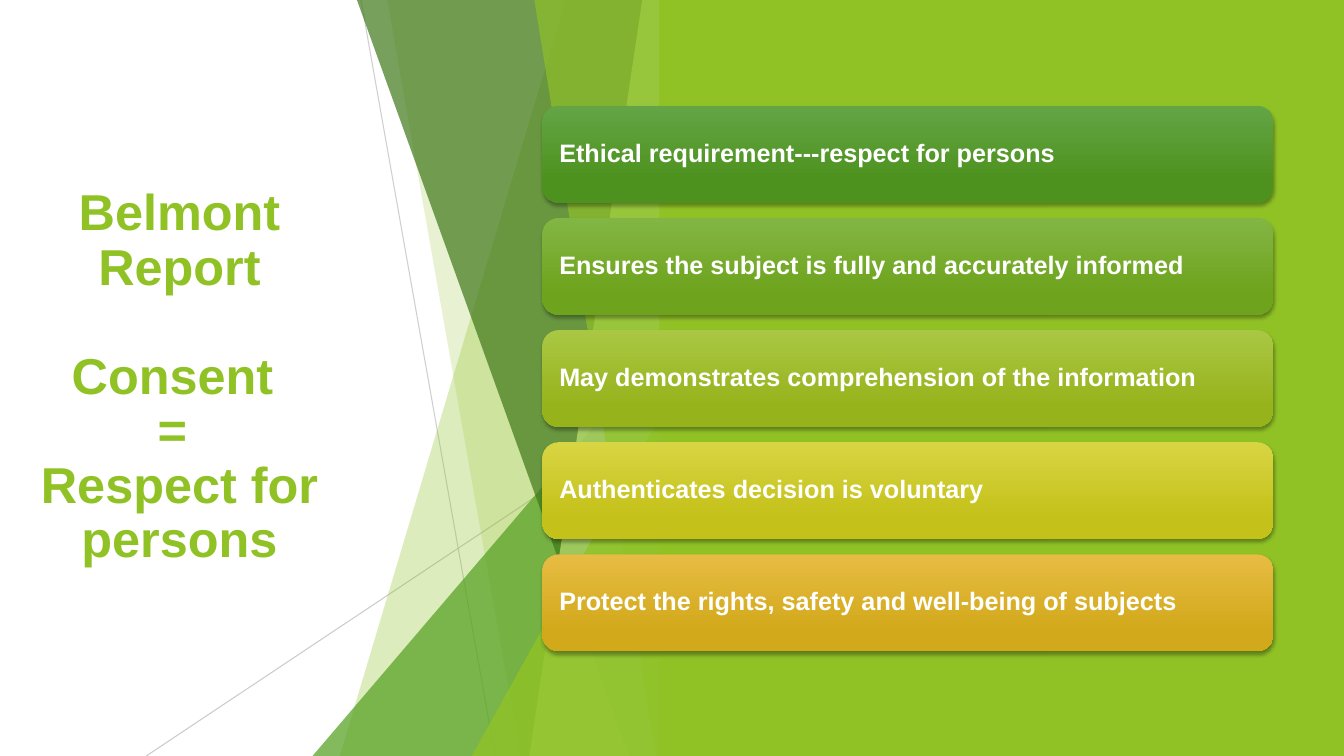
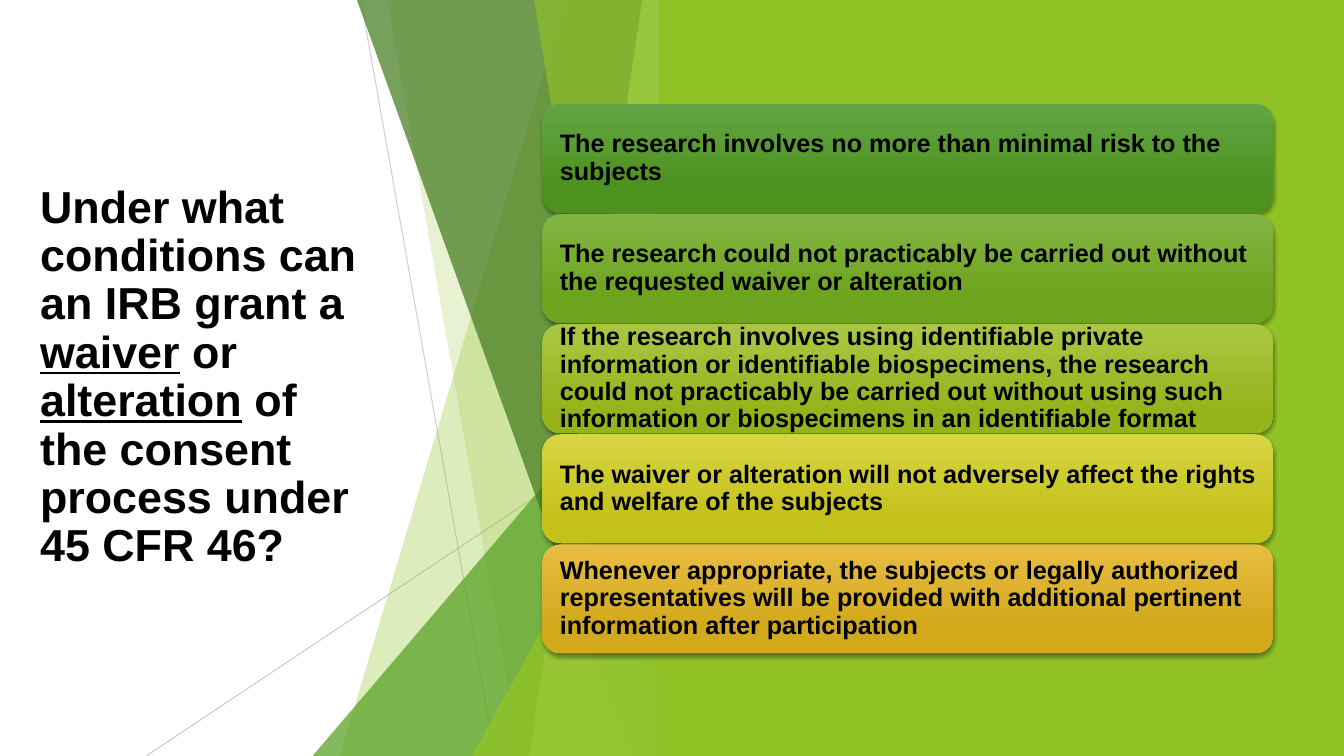
from lxml import etree
from pptx import Presentation
from pptx.dml.color import RGBColor
from pptx.enum.shapes import MSO_CONNECTOR, MSO_SHAPE
from pptx.enum.text import MSO_ANCHOR, PP_ALIGN
from pptx.oxml.ns import qn
from pptx.util import Inches, Pt

STRAIGHT = MSO_CONNECTOR.STRAIGHT
RECT = MSO_SHAPE.RECTANGLE
ROUNDED = MSO_SHAPE.ROUNDED_RECTANGLE
TRIANGLE = MSO_SHAPE.ISOSCELES_TRIANGLE
MIDDLE = MSO_ANCHOR.MIDDLE
LEFT, CENTER = PP_ALIGN.LEFT, PP_ALIGN.CENTER

FONT = "Arial"
WIDTH, HEIGHT = 13.33, 7.5
FAN_RIGHT = 6.66
PANEL_LEFT = 6.54
COLORS = {
    "lime": "90C226",
    "green": "54A021",
    "forest": "3F7819",
    "pale": "C0E474",
    "hairline": "BFBFBF",
    "white": "FFFFFF",
    "black": "000000",
}
BAR_GRADIENTS = [
    ("63A545", "4D921E"),
    ("82B644", "6EA31D"),
    ("AAC744", "97B31C"),
    ("D8D543", "C4C11A"),
    ("E7BC43", "D2A91B"),
]


def rgb(name):
    return RGBColor.from_string(COLORS[name])


def set_alpha(shape, percent):
    for color in shape._element.spPr.xpath(".//a:srgbClr"):
        etree.SubElement(color, qn("a:alpha"), val=str(percent * 1000))


def paint(shape, color, alpha=100):
    shape.shadow.inherit = False
    shape.line.fill.background()
    shape.fill.solid()
    shape.fill.fore_color.rgb = rgb(color)
    if alpha < 100:
        set_alpha(shape, alpha)


def add_hairline(s, x1, y1, x2, y2, alpha):
    line = s.shapes.add_connector(
        STRAIGHT, Inches(x1), Inches(y1), Inches(x2), Inches(y2))
    line.line.color.rgb = rgb("hairline")
    line.line.width = Pt(0.75)
    set_alpha(line, alpha)
    etree.SubElement(line._element.spPr, qn("a:effectLst"))


def add_blade(s, top_x, bottom_x, color, alpha):
    builder = s.shapes.build_freeform(Inches(top_x), 0)
    corners = [(FAN_RIGHT, 0), (FAN_RIGHT, HEIGHT), (bottom_x, HEIGHT)]
    builder.add_line_segments([(Inches(x), Inches(y)) for x, y in corners])
    paint(builder.convert_to_shape(), color, alpha)


def add_wedge(s, left, top, color, alpha):
    wedge = s.shapes.add_shape(
        TRIANGLE, Inches(left), Inches(top),
        Inches(FAN_RIGHT - left), Inches(HEIGHT - top))
    wedge.adjustments[0] = 1
    paint(wedge, color, alpha)


def add_backdrop(s):
    add_hairline(s, 3.58, 0, 4.91, HEIGHT, 75)
    add_hairline(s, FAN_RIGHT, 4.03, 1.45, HEIGHT, 80)
    add_blade(s, 5.61, 3.37, "lime", 30)
    add_blade(s, 3.84, 5.16, "lime", 20)
    add_wedge(s, 3.1, 3.33, "green", 72)
    add_blade(s, 3.54, 6.24, "forest", 70)
    add_blade(s, 6.37, 5.25, "pale", 70)
    add_blade(s, 5.3, 6.51, "lime", 65)
    add_wedge(s, 4.68, 3.93, "lime", 80)
    panel = s.shapes.add_shape(
        RECT, Inches(PANEL_LEFT), 0, Inches(WIDTH - PANEL_LEFT), Inches(HEIGHT))
    paint(panel, "lime")


def style_paragraph(p, size, color, align):
    p.alignment = align
    p.line_spacing = 0.9
    p.font.name = FONT
    p.font.size = Pt(size)
    p.font.bold = True
    p.font.color.rgb = rgb(color)


def add_title(s, left, width, paragraphs, size, color, align):
    box = s.shapes.add_textbox(
        Inches(left), Inches(1.51), Inches(width), Inches(4.48))
    tf = box.text_frame
    tf.word_wrap = True
    tf.vertical_anchor = MIDDLE
    for i, (text, space_before) in enumerate(paragraphs):
        p = tf.add_paragraph() if i else tf.paragraphs[0]
        style_paragraph(p, size, color, align)
        p.space_before = Pt(space_before)
        for j, part in enumerate(text.split("_")):
            r = p.add_run()
            r.text = part
            if j % 2:
                r.font.underline = True


def add_drop_shadow(shape):
    shape.shadow.inherit = False
    effects = shape._element.spPr.find(qn("a:effectLst"))
    shadow = etree.SubElement(
        effects, qn("a:outerShdw"), blurRad=str(Pt(3)), dist=str(Pt(2)),
        dir="5400000", algn="ctr", rotWithShape="0")
    color = etree.SubElement(shadow, qn("a:srgbClr"), val=COLORS["black"])
    etree.SubElement(color, qn("a:alpha"), val="35000")


def add_bar(s, top, height, text, color, gradient):
    bar = s.shapes.add_shape(
        ROUNDED, Inches(5.38), Inches(top), Inches(7.25), Inches(height))
    bar.line.fill.background()
    bar.fill.gradient()
    bar.fill.gradient_angle = 270
    for stop, position, shade in zip(bar.fill.gradient_stops, (0, 0.78), gradient):
        stop.position = position
        stop.color.rgb = RGBColor.from_string(shade)
    add_drop_shadow(bar)
    tf = bar.text_frame
    tf.word_wrap = True
    tf.vertical_anchor = MIDDLE
    tf.margin_left = tf.margin_right = Inches(0.12)
    tf.margin_top = tf.margin_bottom = 0
    p = tf.paragraphs[0]
    p.text = text
    style_paragraph(p, 18, color, LEFT)


def add_bars(s, first_top, last_top, height, color, texts):
    pitch = (last_top - first_top) / (len(texts) - 1)
    for i, (text, gradient) in enumerate(zip(texts, BAR_GRADIENTS)):
        add_bar(s, first_top + i * pitch, height, text, color, gradient)


def add_slide(prs):
    s = prs.slides.add_slide(prs.slide_layouts[6])
    s.background.fill.solid()
    s.background.fill.fore_color.rgb = rgb("white")
    add_backdrop(s)
    return s


def add_consent_slide(prs):
    s = add_slide(prs)
    title = [
        ("Belmont Report", 0),
        ("Consent ", 39),
        ("= ", 0),
        ("Respect for persons", 0),
    ]
    add_title(s, 0.19, 3.18, title, 36, "lime", CENTER)
    add_bars(s, 1.05, 5.5, 0.96, "white", [
        "Ethical requirement---respect for persons",
        "Ensures the subject is fully and accurately informed",
        "May demonstrates comprehension of the information",
        "Authenticates decision is voluntary",
        "Protect the rights, safety and well-being of subjects",
    ])


def add_waiver_slide(prs):
    s = add_slide(prs)
    title = [(
        "Under what conditions can an IRB grant a _waiver_ or _alteration_ "
        "of the consent process under 45 CFR 46?", 0)]
    add_title(s, 0.3, 3.53, title, 32, "black", LEFT)
    add_bars(s, 1.03, 5.4, 1.08, "black", [
        "The research involves no more than minimal risk to the subjects",
        "The research could not practicably be carried out without the "
        "requested waiver or alteration",
        "If the research involves using identifiable private information or "
        "identifiable biospecimens, the research could not practicably be "
        "carried out without using such information or biospecimens in an "
        "identifiable format",
        "The waiver or alteration will not adversely affect the rights and "
        "welfare of the subjects",
        "Whenever appropriate, the subjects or legally authorized "
        "representatives will be provided with additional pertinent "
        "information after participation",
    ])


def main():
    prs = Presentation()
    prs.slide_width = Inches(WIDTH)
    prs.slide_height = Inches(HEIGHT)
    add_consent_slide(prs)
    add_waiver_slide(prs)
    prs.save("out.pptx")


if __name__ == "__main__":
    main()
